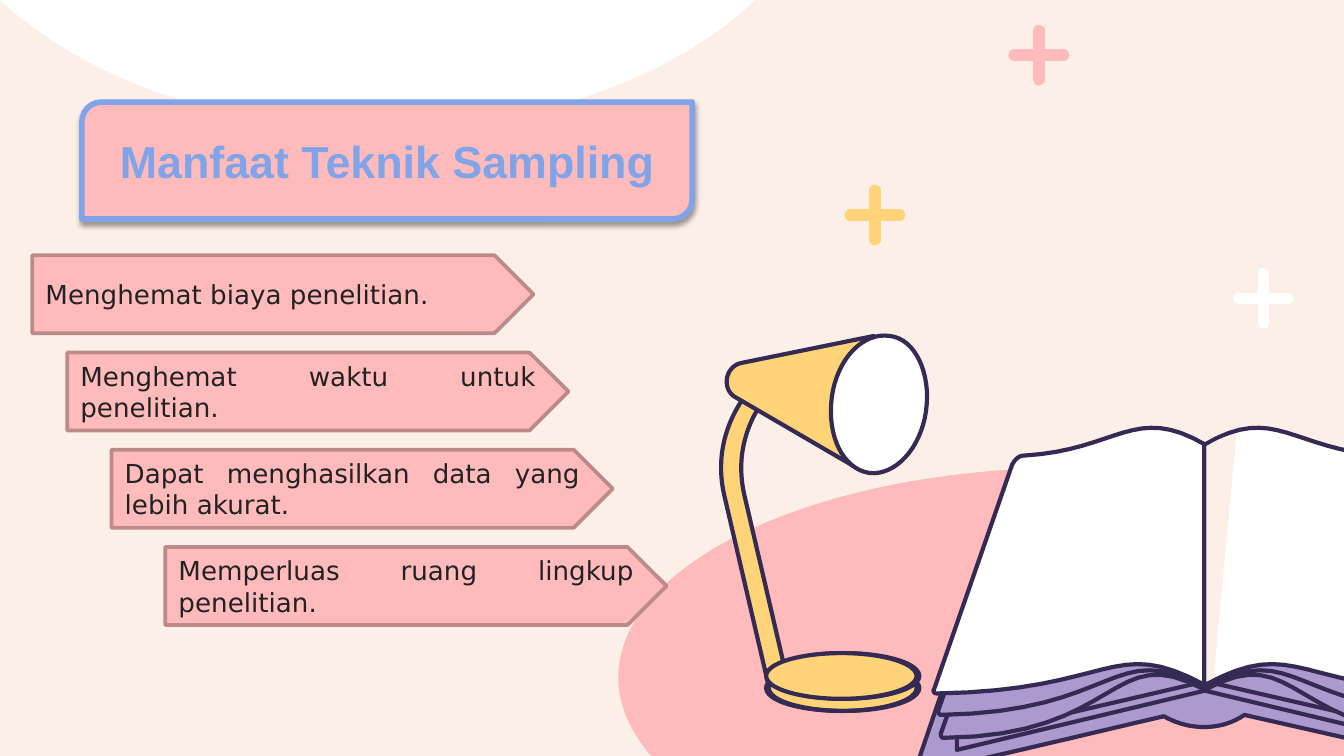
"""Build the slide on the benefits of sampling techniques, with a desk lamp and an open book."""
from lxml.etree import SubElement
from pptx import Presentation
from pptx.dml.color import RGBColor
from pptx.enum.shapes import MSO_CONNECTOR, MSO_SHAPE
from pptx.enum.text import MSO_ANCHOR, PP_ALIGN
from pptx.oxml import parse_xml
from pptx.oxml.ns import nsdecls, qn
from pptx.util import Inches, Pt

SLIDE_WIDTH = 10
SLIDE_HEIGHT = SLIDE_WIDTH * 9 / 16

TITLE = "Manfaat Teknik Sampling"
BENEFITS = [
    (0.24, "Menghemat biaya penelitian."),
    (0.5, "Menghemat waktu untuk penelitian."),
    (0.83, "Dapat menghasilkan data yang lebih akurat."),
    (1.23, "Memperluas ruang lingkup penelitian."),
]
FIRST_ROW, LAST_ROW = 1.9, 4.07
ROW_STEP = (LAST_ROW - FIRST_ROW) / (len(BENEFITS) - 1)
ARROW_WIDTH, ARROW_HEIGHT = 3.73, 0.58

CREAM, PINK, WHITE, YELLOW = "FCEFE7", "FFBBBB", "FFFFFF", "FFD378"
PURPLE, INK, BLUE, ROSE, TEXT = "AC99CE", "352A53", "80A4E7", "BD8A8A", "222222"

PLUS_SIGNS = [(9.4, 2.22, WHITE), (6.51, 1.6, YELLOW), (7.73, 0.41, PINK)]
PLUS_ARM = 0.37 / 2
SPINE = 17.93 / 2
CURVE_STEPS = 16

TOP_ARC = [(0, 0), (0, -0.96), (5.62, -0.96), (5.62, 0),
           (5.01, 0.58, 3.98, 0.96, 2.81, 0.96), (1.65, 0.96, 0.62, 0.58, 0, 0)]
LAMP_STEM = [(5.73, 2.69), (5.52, 2.98), (5.38, 3.19, 5.33, 3.44, 5.39, 3.69), (5.73, 5.15),
             (5.88, 5.15), (5.54, 3.69), (5.48, 3.44, 5.53, 3.19, 5.68, 2.98), (5.88, 2.69)]
LAMP_BASES = [(5.7, 4.95, YELLOW), (5.72, 4.86, None), (5.72, 4.95, None), (5.7, 4.86, YELLOW)]
LAMP_CONE = [(6.5, 2.5), (5.52, 2.7), (5.46, 2.71, 5.42, 2.76, 5.41, 2.81),
             (5.4, 2.87, 5.42, 2.93, 5.48, 2.96), (6.39, 3.49)]
LAMP_OPENING = [(6.89, 3.06), (6.85, 3.34, 6.66, 3.54, 6.47, 3.52),
                (6.27, 3.49, 6.15, 3.24, 6.19, 2.95), (6.23, 2.67, 6.42, 2.47, 6.62, 2.5),
                (6.81, 2.52, 6.93, 2.78, 6.89, 3.06)]
BOOK_COVER = [(8.69, 3.46), (8.33, 3.46, 8.07, 3.9, 7.49, 3.93), (7.45, 3.94, 7.42, 3.96, 7.4, 4),
              (6.82, 5.7), (6.82, 5.72, 6.83, 5.74, 6.86, 5.74), (7.11, 5.7, 8.14, 5.45, 8.66, 5.33),
              (8.75, 5.38, 8.85, 5.41, 8.96, 5.41), (9.07, 5.41, 9.17, 5.38, 9.26, 5.32),
              (11.07, 5.73), (11.09, 5.73, 11.11, 5.71, 11.1, 5.69), (10.52, 4),
              (10.51, 3.96, 10.47, 3.94, 10.43, 3.93), (9.85, 3.9, 9.6, 3.46, 9.24, 3.46),
              (9.15, 3.46, 9.06, 3.48, 8.96, 3.54), (8.86, 3.48, 8.77, 3.46, 8.69, 3.46)]
PAGE_EDGE = [(8.96, 4.77), (7.12, 5.36), (7.12, 5.58), (8.96, 5.14)]
INNER_EDGE = [(7.85, 5.33), (8.97, 5.07), (10.06, 5.32), (10.06, 5.12), (8.88, 4.8)]
PAGES = [
    (PURPLE, [(7.68, 3.72), (8.38, 3.68, 8.43, 3.05, 8.96, 3.36), (8.96, 5.13),
              (8.26, 4.75, 8.35, 5.48, 7.02, 5.49), (7.01, 5.49, 7, 5.48, 7, 5.46),
              (7.59, 3.79), (7.6, 3.75, 7.64, 3.72, 7.68, 3.72)]),
    (PURPLE, [(7.66, 3.55), (8.36, 3.51, 8.44, 3.03, 8.97, 3.34), (8.97, 5.12),
              (8.27, 4.74, 8.33, 5.3, 7, 5.32), (6.99, 5.32, 6.98, 5.3, 6.98, 5.29),
              (7.57, 3.62), (7.58, 3.58, 7.62, 3.55, 7.66, 3.55)]),
    (WHITE, [(7.62, 3.39), (8.32, 3.35, 8.44, 3, 8.97, 3.31), (8.97, 5.1),
             (8.27, 4.72, 8.3, 5.14, 6.97, 5.16), (6.95, 5.16, 6.94, 5.14, 6.95, 5.13),
             (7.53, 3.46), (7.55, 3.42, 7.58, 3.39, 7.62, 3.39)]),
]
PAGE_SHADE = [(9.2, 3.23), (9.08, 3.25, 8.98, 3.32, 8.98, 3.32), (8.98, 5.07), (9.03, 5.04)]


def color(value):
    return RGBColor.from_string(value)


def paint(shape, fill, line=None, width=2.25):
    shape.shadow.inherit = False
    if fill:
        shape.fill.solid()
        shape.fill.fore_color.rgb = color(fill)
    else:
        shape.fill.background()
    if line:
        shape.line.color.rgb = color(line)
        shape.line.width = Pt(width)
    else:
        shape.line.fill.background()


def add_preset(slide, preset, box, fill, line=None, width=2.25):
    shape = slide.shapes.add_shape(preset, *map(Inches, box))
    paint(shape, fill, line, width)
    return shape


def flatten(outline):
    points = [outline[0]]
    for segment in outline[1:]:
        if len(segment) == 2:
            points.append(segment)
            continue
        corners = [points[-1], segment[:2], segment[2:4], segment[4:]]
        for step in range(1, CURVE_STEPS + 1):
            t = step / CURVE_STEPS
            weights = ((1 - t) ** 3, 3 * t * (1 - t) ** 2, 3 * t * t * (1 - t), t ** 3)
            points.append(tuple(sum(weight * corner[axis] for weight, corner in zip(weights, corners))
                                for axis in (0, 1)))
    return points


def add_outline(slide, outline, fill, line=INK, mirrored=False):
    points = [(Inches(2 * SPINE - x if mirrored else x), Inches(y)) for x, y in flatten(outline)]
    builder = slide.shapes.build_freeform(*points[0], scale=1.0)
    builder.add_line_segments(points[1:], close=True)
    paint(builder.convert_to_shape(), fill, line)


def add_plus(slide, x, y, line):
    for dx, dy in ((0, PLUS_ARM), (PLUS_ARM, 0)):
        ends = map(Inches, (x - dx, y - dy, x + dx, y + dy))
        connector = slide.shapes.add_connector(MSO_CONNECTOR.STRAIGHT, *ends)
        connector.line.color.rgb = color(line)
        connector.line.width = Pt(6)
        properties = connector._element.spPr
        properties.find(qn("a:ln")).set("cap", "rnd")
        SubElement(properties, qn("a:effectLst"))


def write(shape, text, font_name, size, ink, alignment, bold=False):
    frame = shape.text_frame
    frame.word_wrap = True
    frame.vertical_anchor = MSO_ANCHOR.MIDDLE
    paragraph = frame.paragraphs[0]
    paragraph.alignment = alignment
    run = paragraph.add_run()
    run.text = text
    run.font.name, run.font.size, run.font.bold = font_name, Pt(size), bold
    run.font.color.rgb = color(ink)


def add_background_art(slide):
    add_preset(slide, MSO_SHAPE.OVAL, (4.6, 3.48, 6.75, 3.12), PINK)
    add_outline(slide, TOP_ARC, WHITE, None)
    for sign in PLUS_SIGNS:
        add_plus(slide, *sign)


def add_lamp(slide):
    add_outline(slide, LAMP_STEM, YELLOW)
    for left, top, fill in LAMP_BASES:
        add_preset(slide, MSO_SHAPE.OVAL, (left, top, 1.12, 0.34), fill, INK)
    add_outline(slide, LAMP_CONE, YELLOW)
    add_outline(slide, LAMP_OPENING, WHITE)


def add_book(slide):
    add_outline(slide, BOOK_COVER, PURPLE)
    for mirrored in (False, True):
        add_outline(slide, PAGE_EDGE, PURPLE, mirrored=mirrored)
    add_outline(slide, INNER_EDGE, PURPLE)
    for fill, page in PAGES:
        for mirrored in (False, True):
            add_outline(slide, page, fill, mirrored=mirrored)
    add_outline(slide, PAGE_SHADE, CREAM, None)


def add_title(slide):
    box = (0.61, 0.76, 4.54, 0.87)
    banner = add_preset(slide, MSO_SHAPE.ROUND_2_DIAG_RECTANGLE, box, PINK, BLUE, 3)
    banner._element.spPr.find(qn("a:effectLst")).append(parse_xml(
        f'<a:outerShdw {nsdecls("a")} blurRad="{Pt(3.1)}" dist="{Pt(1.6)}" dir="5400000">'
        '<a:srgbClr val="000000"><a:alpha val="38000"/></a:srgbClr></a:outerShdw>'))
    write(banner, TITLE, "Arial", 24, BLUE, PP_ALIGN.CENTER, True)


def add_benefits(slide):
    for row, (left, text) in enumerate(BENEFITS):
        box = (left, FIRST_ROW + row * ROW_STEP, ARROW_WIDTH, ARROW_HEIGHT)
        arrow = add_preset(slide, MSO_SHAPE.PENTAGON, box, PINK, ROSE, 2)
        write(arrow, text, "DejaVu Sans", 14, TEXT, PP_ALIGN.JUSTIFY)


def main():
    presentation = Presentation()
    presentation.slide_width, presentation.slide_height = Inches(SLIDE_WIDTH), Inches(SLIDE_HEIGHT)
    slide = presentation.slides.add_slide(presentation.slide_layouts[6])
    slide.background.fill.solid()
    slide.background.fill.fore_color.rgb = color(CREAM)
    for add_part in (add_background_art, add_lamp, add_book, add_title, add_benefits):
        add_part(slide)
    presentation.save("out.pptx")


if __name__ == "__main__":
    main()
